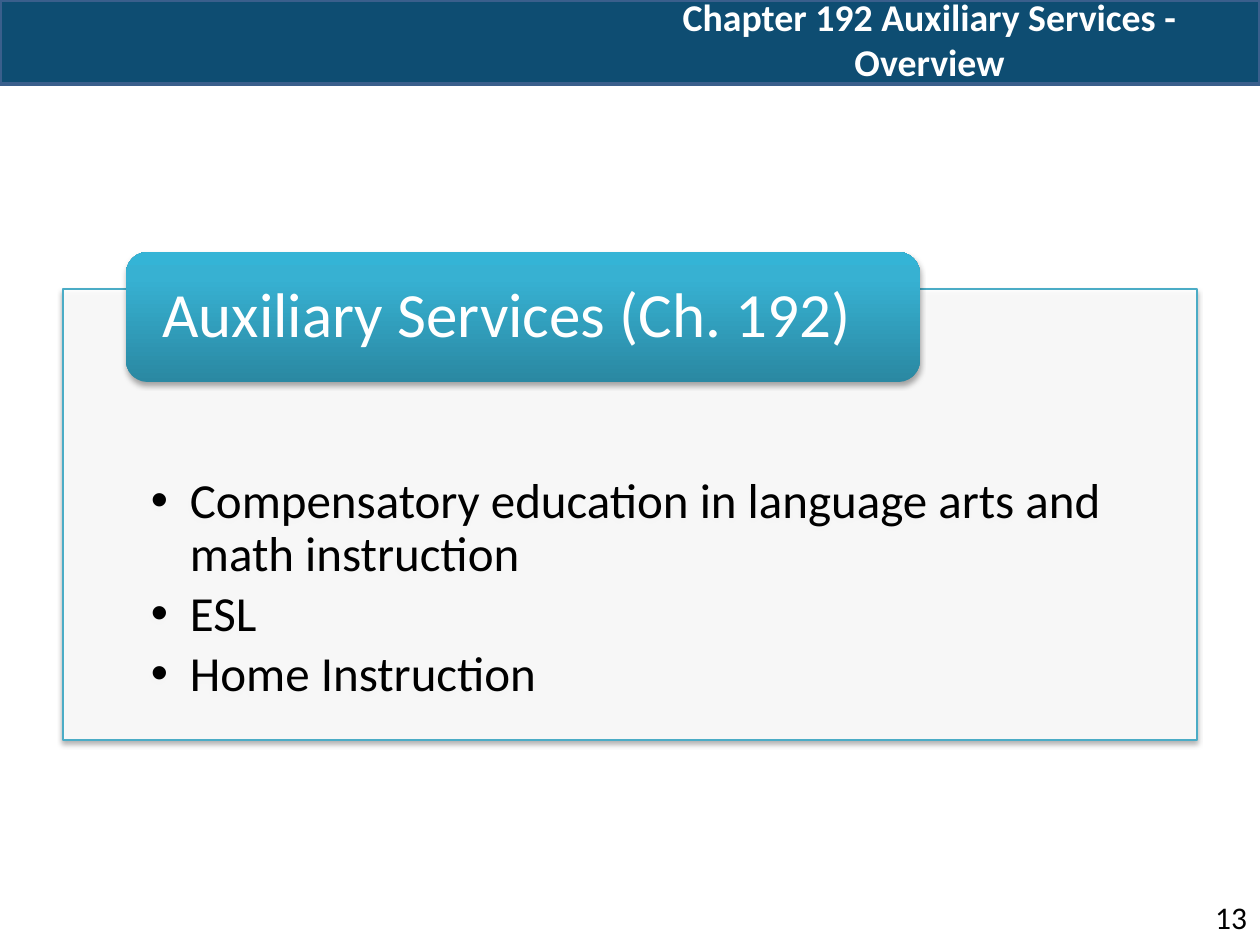
from copy import deepcopy
from dataclasses import dataclass

from lxml.etree import SubElement
from pptx import Presentation
from pptx.dml.color import RGBColor
from pptx.enum.shapes import MSO_SHAPE
from pptx.enum.text import MSO_ANCHOR, PP_ALIGN
from pptx.oxml.ns import qn
from pptx.util import Emu, Pt

SCALE = 914400 / 126


@dataclass(frozen=True)
class Theme:
    font: str = "Calibri"
    navy: str = "0E4D72"
    edge: str = "3A5F8C"
    teal: str = "4BACC6"
    white: str = "FFFFFF"
    black: str = "000000"
    fade: tuple = ((0, "2A88A2"), (0.8, "37B1D2"), (1, "34B4D6"))
    title: float = 21.6
    head: int = 36
    body: int = 28
    page: int = 18


@dataclass(frozen=True)
class Box:
    left: int
    top: int
    width: int
    height: int

    def emu(self) -> tuple:
        return tuple(px(n) for n in (self.left, self.top, self.width, self.height))


@dataclass(frozen=True)
class Style:
    size: float
    color: str
    bold: bool = False


THEME = Theme()
BAR = Box(0, 0, 1260, 84)
TITLE = Box(599, 0, 661, 78)
PANEL = Box(63, 289, 1134, 451)
TAB = Box(126, 252, 794, 130)
PAGE = Box(1176, 892, 84, 50)
ITEMS = (
    "Compensatory education in language arts and math instruction",
    "ESL",
    "Home Instruction",
)


def px(count: int) -> Emu:
    return Emu(round(count * SCALE))


def rgb(code: str) -> RGBColor:
    return RGBColor.from_string(code)


def add_run(para, text: str, style: Style) -> None:
    run = para.add_run()
    run.text = text
    font = run.font
    font.name, font.size, font.bold = THEME.font, Pt(style.size), style.bold
    font.color.rgb = rgb(style.color)


def add_box(slide, kind: MSO_SHAPE, box: Box):
    shape = slide.shapes.add_shape(kind, *box.emu())
    shape.shadow.inherit = False
    return shape


def fill_line(shape, fill: str, line: str, width: float) -> None:
    shape.fill.solid()
    shape.fill.fore_color.rgb = rgb(fill)
    shape.line.color.rgb = rgb(line)
    shape.line.width = Pt(width)


def set_frame(shape, anchor: MSO_ANCHOR, left: int, top: int, right: int, bottom: int):
    """Set the anchor and the insets, and return the text frame."""
    frame = shape.text_frame
    frame.word_wrap = True
    frame.vertical_anchor = anchor
    frame.margin_left, frame.margin_top = px(left), px(top)
    frame.margin_right, frame.margin_bottom = px(right), px(bottom)
    return frame


def set_alpha(color, percent: int) -> None:
    SubElement(color, qn("a:alpha"), val=str(percent * 1000))


def add_shade(shape) -> None:
    """Give the shape a soft shadow straight below it."""
    effect = shape.element.spPr.find(qn("a:effectLst"))
    shade = SubElement(effect, qn("a:outerShdw"), blurRad=str(Pt(3.1)),
                       dist=str(Pt(1.8)), dir="5400000", rotWithShape="0")
    color = SubElement(shade, qn("a:srgbClr"), val=THEME.black)
    set_alpha(color, 35)


def add_fade(shape) -> None:
    """Fill the shape with the theme's gradient, from bottom to top."""
    fill = shape.fill
    fill.gradient()
    fill.gradient_angle = 90
    stops = shape.element.spPr.find(qn("a:gradFill")).find(qn("a:gsLst"))
    stops.append(deepcopy(stops[-1]))
    for stop, (place, color) in zip(fill.gradient_stops, THEME.fade):
        stop.position = place
        stop.color.rgb = rgb(color)


def add_bullet(para, indent: int) -> None:
    props = para._p.get_or_add_pPr()
    props.set("marL", str(px(indent)))
    props.set("indent", str(-px(indent)))
    SubElement(props, qn("a:buFont"), typeface="Arial")
    SubElement(props, qn("a:buChar"), char="•")


def draw_title(slide, text: str) -> None:
    bar = add_box(slide, MSO_SHAPE.RECTANGLE, BAR)
    fill_line(bar, THEME.navy, THEME.edge, 2)
    title = slide.shapes.title
    title.element.addprevious(bar.element)
    title.left, title.top, title.width, title.height = TITLE.emu()
    para = set_frame(title, MSO_ANCHOR.MIDDLE, 13, 6, 13, 6).paragraphs[0]
    para.alignment = PP_ALIGN.CENTER
    add_run(para, text, Style(THEME.title, THEME.white, True))


def draw_panel(slide, items: tuple) -> None:
    panel = add_box(slide, MSO_SHAPE.RECTANGLE, PANEL)
    fill_line(panel, THEME.white, THEME.teal, 0.75)
    set_alpha(panel.element.spPr.find(qn("a:solidFill"))[0], 90)
    add_shade(panel)
    frame = set_frame(panel, MSO_ANCHOR.TOP, 88, 187, 88, 28)
    for i, item in enumerate(items):
        para = frame.add_paragraph() if i else frame.paragraphs[0]
        add_bullet(para, 39)
        para.alignment = PP_ALIGN.LEFT
        para.line_spacing = 0.9
        para.space_after = Pt(4.2)
        add_run(para, item, Style(THEME.body, THEME.black))


def draw_tab(slide, text: str) -> None:
    tab = add_box(slide, MSO_SHAPE.ROUNDED_RECTANGLE, TAB)
    add_fade(tab)
    tab.line.fill.background()
    add_shade(tab)
    para = set_frame(tab, MSO_ANCHOR.MIDDLE, 30, 0, 30, 0).paragraphs[0]
    para.alignment = PP_ALIGN.LEFT
    para.line_spacing = 0.9
    add_run(para, text, Style(THEME.head, THEME.white))


def draw_page(slide, text: str) -> None:
    page = slide.shapes.add_textbox(*PAGE.emu())
    para = set_frame(page, MSO_ANCHOR.TOP, 13, 6, 13, 6).paragraphs[0]
    para.alignment = PP_ALIGN.RIGHT
    add_run(para, text, Style(THEME.page, THEME.black))


def main() -> None:
    deck = Presentation()
    deck.slide_width, deck.slide_height = px(1260), px(945)
    slide = deck.slides.add_slide(deck.slide_layouts[5])
    draw_title(slide, "Chapter 192 Auxiliary Services - Overview")
    draw_panel(slide, ITEMS)
    draw_tab(slide, "Auxiliary Services (Ch. 192)")
    draw_page(slide, "13")
    deck.save("out.pptx")


if __name__ == "__main__":
    main()
